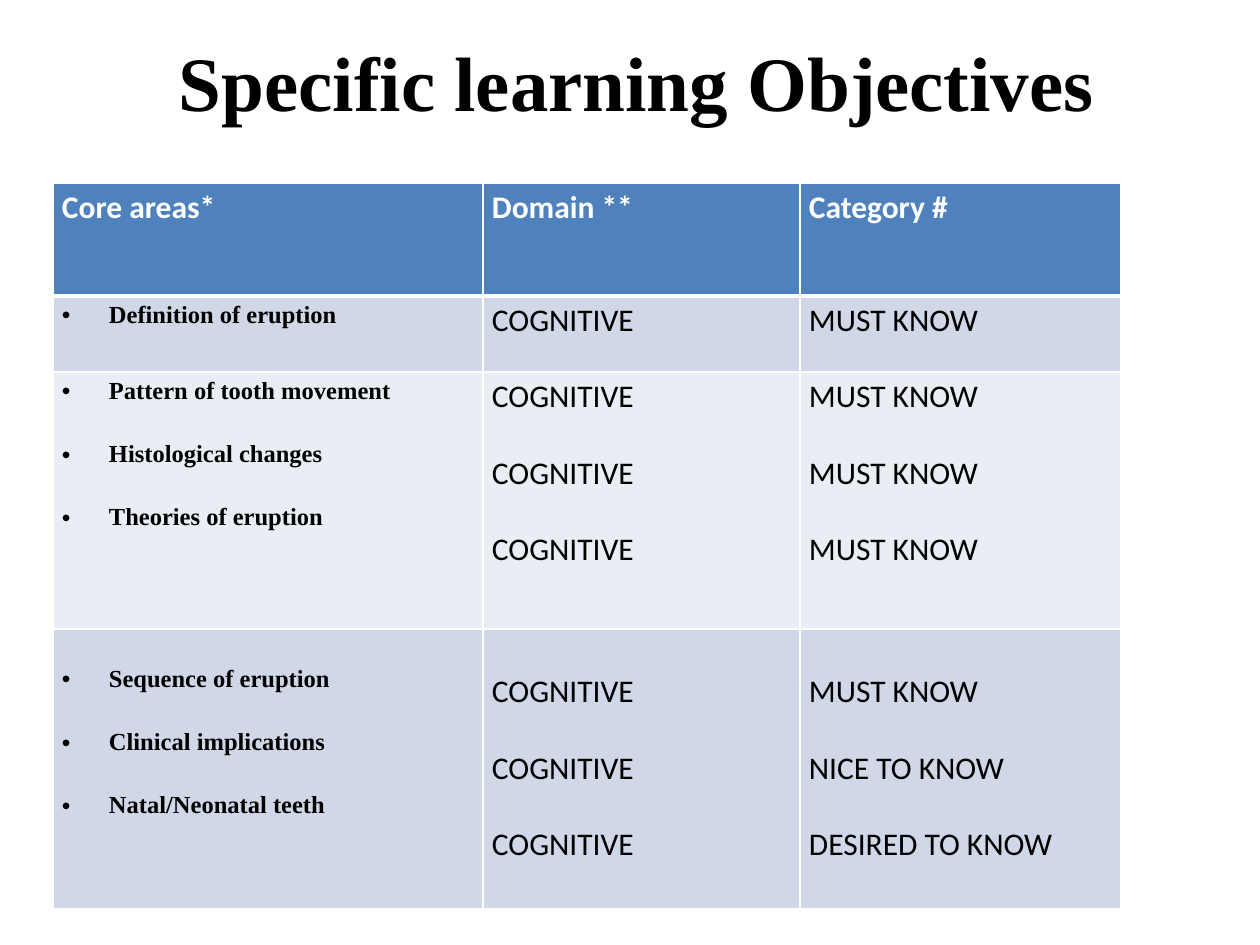
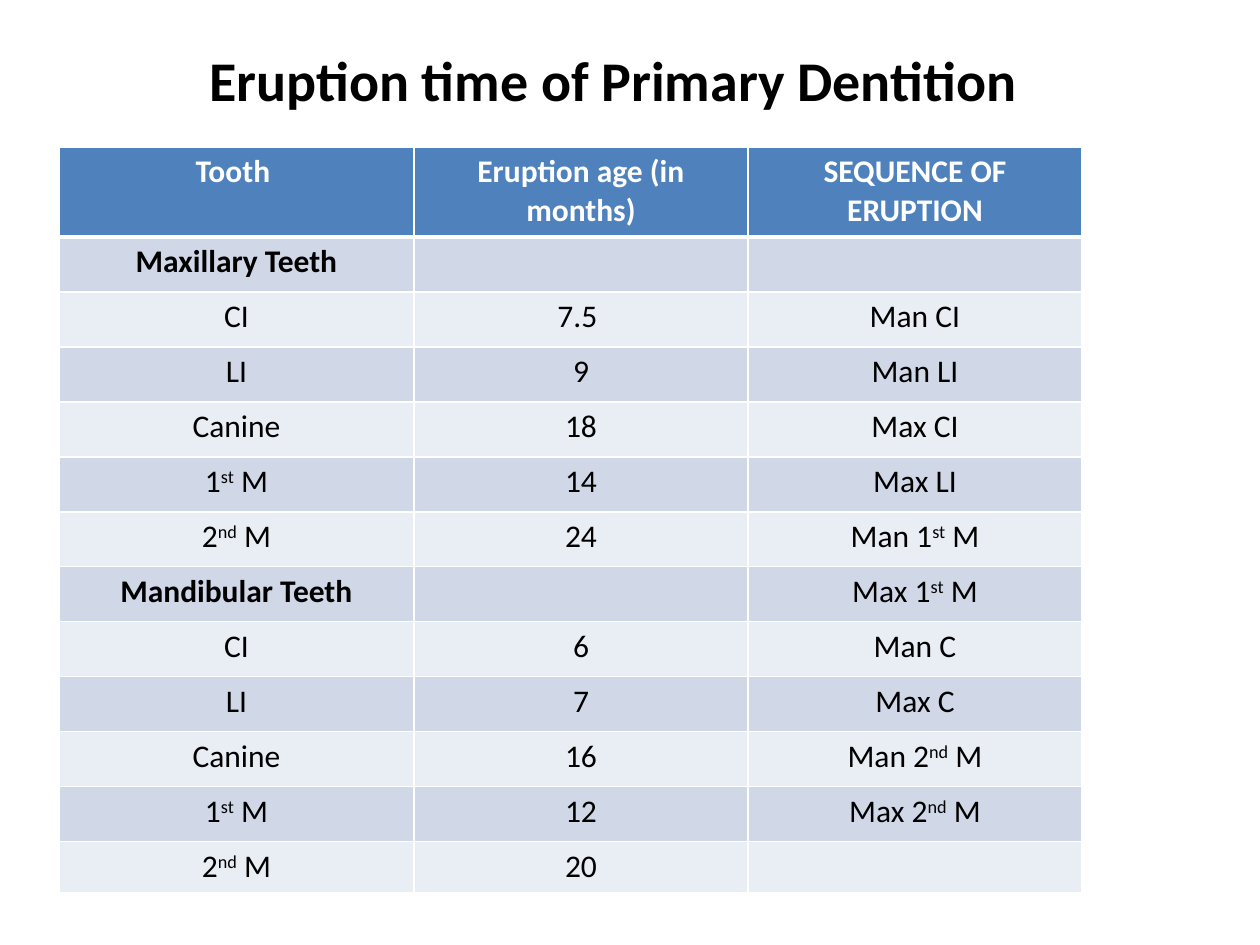
from dataclasses import dataclass

from lxml.etree import SubElement
from pptx import Presentation
from pptx.dml.color import RGBColor
from pptx.enum.text import MSO_ANCHOR, PP_ALIGN
from pptx.oxml import parse_xml
from pptx.oxml.ns import nsdecls, qn
from pptx.util import Emu, Pt


@dataclass(frozen=True)
class Style:
    font: str
    size: int
    bold: bool = False
    color: str = "000000"
    align: PP_ALIGN = PP_ALIGN.LEFT
    bullet: bool = False
    gap: int = 0  # px between paragraphs


class Theme:
    sans, serif = "Calibri", "Times New Roman"
    header_fill, bands = "4F81BD", ("D0D8E8", "E9EDF4")
    rule, rule_pt, header_rule_pt = "FFFFFF", 1, 3
    center = PP_ALIGN.CENTER
    big_title = Style(serif, 44, True, align=center)
    title = Style(sans, 32, True)
    header = Style(sans, 18, True, "FFFFFF")
    area = Style(serif, 14, True, bullet=True, gap=36)
    level = Style(sans, 18, gap=38)
    center_header = Style(sans, 18, True, "FFFFFF", center)
    tooth_group = Style(sans, 18, True, align=center)
    tooth = Style(sans, 18, align=center)


# Every cell is a list of paragraphs.
OBJECTIVES = [
    [["Core areas*"], ["Domain **"], ["Category #"]],
    [["Definition of eruption"], ["COGNITIVE"], ["MUST KNOW"]],
    [["Pattern of tooth movement", "Histological changes", "Theories of eruption"],
     ["COGNITIVE"] * 3, ["MUST KNOW"] * 3],
    [["Sequence of eruption", "Clinical implications", "Natal/Neonatal teeth"],
     ["COGNITIVE"] * 3, ["MUST KNOW", "NICE TO KNOW", "DESIRED TO KNOW"]],
]

# Text between carets is superscript.
ERUPTION_TIMES = [
    ("Tooth ", "Eruption age (in months)", "SEQUENCE OF ERUPTION"),
    ("Maxillary Teeth", "", ""),
    ("CI", "7.5 ", "Man CI"),
    ("LI", "9", "Man LI"),
    ("Canine", "18", "Max CI"),
    ("1^st^ M", "14", "Max LI"),
    ("2^nd^ M", "24", "Man 1^st^ M"),
    ("Mandibular Teeth", "", "Max 1^st^ M"),
    ("CI", "6", "Man C"),
    ("LI", "7", "Max C"),
    ("Canine", "16", "Man 2^nd^ M"),
    ("1^st^ M", "12", "Max 2^nd^ M"),
    ("2^nd^ M", "20", ""),
]
TOOTH_GROUPS = ("Maxillary Teeth", "Mandibular Teeth")

BULLET_INDENT = 47
CELL_TOP = 6


def px(n):
    return Emu(round(n * 914400 / 126))


def write(tf, paragraphs, style):
    for i, text in enumerate(paragraphs):
        p = tf.add_paragraph() if i else tf.paragraphs[0]
        p.alignment = style.align
        if i:
            p.space_before = px(style.gap)
        if style.bullet:
            pPr = p._p.get_or_add_pPr()
            pPr.set("marL", str(px(BULLET_INDENT)))
            pPr.set("indent", str(-px(BULLET_INDENT)))
            SubElement(pPr, qn("a:buFont")).set("typeface", "Arial")
            SubElement(pPr, qn("a:buChar")).set("char", "•")
        for j, part in enumerate(text.split("^")):
            r = p.add_run()
            r.text = part
            r.font.name, r.font.size, r.font.bold = style.font, Pt(style.size), style.bold
            r.font.color.rgb = RGBColor.from_string(style.color)
            if j % 2:
                r._r.get_or_add_rPr().set("baseline", "30000")


def add_title(slide, text, box, style):
    tf = slide.shapes.add_textbox(*map(px, box)).text_frame
    tf.word_wrap = True
    tf.vertical_anchor = MSO_ANCHOR.MIDDLE
    write(tf, [text], style)


def set_borders(cell, row):
    tcPr = cell._tc.get_or_add_tcPr()
    heavy = {0: "B", 1: "T"}.get(row)
    for i, side in enumerate("LRTB"):
        width = Pt(Theme.header_rule_pt if side == heavy else Theme.rule_pt)
        tcPr.insert(i, parse_xml(
            f'<a:ln{side} {nsdecls("a")} w="{width}"><a:solidFill>'
            f'<a:srgbClr val="{Theme.rule}"/></a:solidFill></a:ln{side}>'))


def add_grid(slide, rows, origin, widths, heights, style_of, side_margin, top_of):
    """Draw a banded table; style_of and top_of give a cell's text style and top margin."""
    size = sum(widths), sum(heights)
    table = slide.shapes.add_table(len(rows), len(widths), *map(px, origin + size)).table
    for column, width in zip(table.columns, widths):
        column.width = px(width)
    for r, (row, height) in enumerate(zip(rows, heights)):
        table.rows[r].height = px(height)
        for c, paragraphs in enumerate(row):
            cell = table.cell(r, c)
            cell.margin_left = cell.margin_right = px(side_margin)
            cell.margin_top, cell.margin_bottom = px(top_of(r, c)), px(CELL_TOP)
            cell.fill.solid()
            fill = Theme.bands[(r - 1) % 2] if r else Theme.header_fill
            cell.fill.fore_color.rgb = RGBColor.from_string(fill)
            set_borders(cell, r)
            write(cell.text_frame, paragraphs, style_of(r, c))


def objectives_slide(slide):
    def style_of(r, c):
        if r == 0:
            return Theme.header
        return Theme.level if c else Theme.area

    def top_of(r, c):
        last = r == len(OBJECTIVES) - 1
        return CELL_TOP + (style_of(r, c).gap if last and c else 31 if last else 0)

    add_title(slide, "Specific learning Objectives ", (158, 5, 958, 152), Theme.big_title)
    add_grid(slide, OBJECTIVES, (53, 183), (430, 317, 321), (113, 76, 257, 280),
             style_of, 9, top_of)


def eruption_slide(slide):
    def style_of(r, c):
        if r == 0:
            return Theme.center_header
        return Theme.tooth_group if ERUPTION_TIMES[r][c] in TOOTH_GROUPS else Theme.tooth

    rows = [[[text] for text in row] for row in ERUPTION_TIMES]
    heights = [90] + [55] * (len(rows) - 2) + [51]
    add_grid(slide, rows, (59, 147), (355, 334, 334), heights,
             style_of, 13, lambda r, c: CELL_TOP)
    add_title(slide, "Eruption time of Primary Dentition", (197, 39, 842, 81), Theme.title)


def main():
    prs = Presentation()
    prs.slide_width, prs.slide_height = px(1260), px(945)
    for build in (objectives_slide, eruption_slide):
        build(prs.slides.add_slide(prs.slide_layouts[6]))
    prs.save("out.pptx")


if __name__ == "__main__":
    main()
